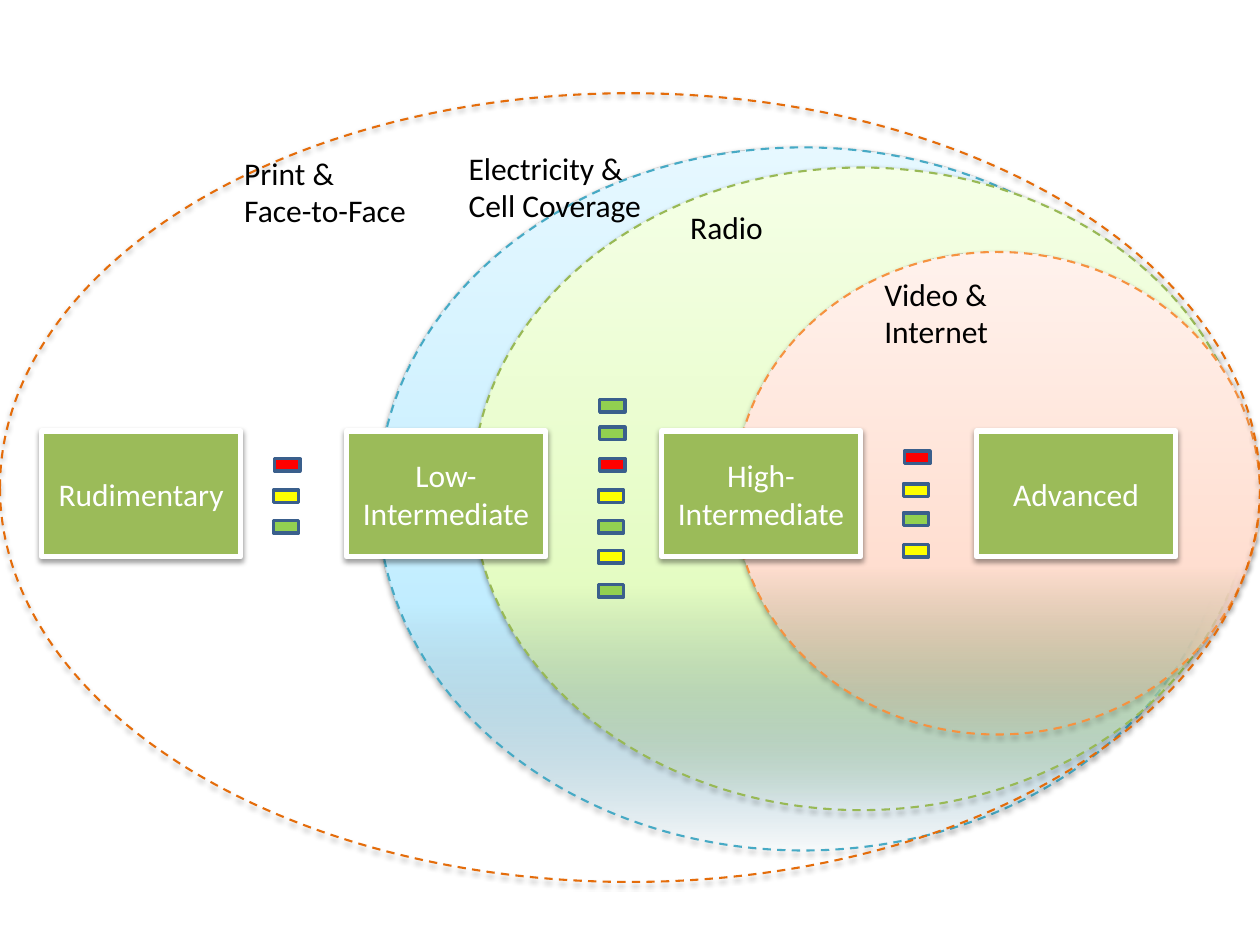
import pptx
import pptx.util
import pptx.dml.color
import pptx.enum.dml
import pptx.enum.shapes
import pptx.enum.text
import pptx.oxml
import pptx.oxml.ns
import lxml.etree

Inches = pptx.util.Inches
Pt = pptx.util.Pt
SHAPE = pptx.enum.shapes.MSO_SHAPE
qn = pptx.oxml.ns.qn


def color(value):
    return pptx.dml.color.RGBColor.from_string(value)


def add_outlined(shapes, kind, box, line, width, shadow=True):
    shape = shapes.add_shape(kind, *[Inches(v) for v in box])
    shape.line.color.rgb = color(line)
    shape.line.width = Pt(width)
    shape.shadow.inherit = False
    if shadow:
        effects = shape._element.spPr.find(qn("a:effectLst"))
        outer = lxml.etree.SubElement(
            effects, qn("a:outerShdw"), blurRad=str(Pt(3.1)), dist=str(Pt(1.6)),
            dir="5400000", rotWithShape="0")
        black = lxml.etree.SubElement(outer, qn("a:srgbClr"), val="000000")
        lxml.etree.SubElement(black, qn("a:alpha"), val="38000")
    return shape


deck = pptx.Presentation()
deck.slide_width = Inches(10)
deck.slide_height = Inches(7.5)
slide = deck.slides.add_slide(deck.slide_layouts[6])

coverage_areas = [
    ((3, 1.17, 6.75, 5.58), "46AAC5", ("A7E6FF", "C1EDFF", "E7F8FF"), 3),
    ((3.75, 1.33, 6.17, 5.1), "98B955", ("DAFDA7", "E4FCC2", "F5FFE7"), 0),
    ((5.83, 2, 4.17, 3.83), "F69240", ("FFD2BD", "FFDED0", "FFF2ED"), 4),
    ((0, 0.74, 10, 6.26), "E46C0A", None, None),
]
for box, line, gradient, opacity in coverage_areas:
    area = add_outlined(slide.shapes, SHAPE.OVAL, box, line, 1.2)
    area.line.dash_style = pptx.enum.dml.MSO_LINE.DASH
    if gradient is None:
        area.fill.background()
        continue
    area.fill.gradient()
    area.fill.gradient_angle = 90
    stops = area._element.spPr.find(qn("a:gradFill")).find(qn("a:gsLst"))
    for stop in list(stops):
        stops.remove(stop)
    for position, shade in zip((0, 35, 100), gradient):
        stop = lxml.etree.SubElement(stops, qn("a:gs"), pos=str(position * 1000))
        tint = lxml.etree.SubElement(stop, qn("a:srgbClr"), val=shade)
        if position == 0:
            lxml.etree.SubElement(tint, qn("a:alpha"), val=str(opacity * 1000))

stages = [(0.33, "Rudimentary"), (2.75, "Low-Intermediate"),
          (5.25, "High-Intermediate"), (7.75, "Advanced")]
for left, name in stages:
    stage = add_outlined(slide.shapes, SHAPE.RECTANGLE, (left, 3.42, 1.58, 1), "FFFFFF", 3)
    stage.fill.solid()
    stage.fill.fore_color.rgb = color("9BBB59")
    stage.text_frame.word_wrap = True
    stage.text_frame.vertical_anchor = pptx.enum.text.MSO_ANCHOR.MIDDLE
    paragraph = stage.text_frame.paragraphs[0]
    paragraph.alignment = pptx.enum.text.PP_ALIGN.CENTER
    run = paragraph.add_run()
    run.text = name
    run.font.size = Pt(18)
    run.font.name = "Calibri"
    run.font.color.rgb = color("FFFFFF")

RED, YELLOW, GREEN = "FF0000", "FFFF00", "92D050"
signal_columns = [
    [(2.18, 3.64, RED), (2.17, 3.89, YELLOW), (2.17, 4.13, GREEN)],
    [(4.76, 3.17, GREEN), (4.76, 3.39, GREEN), (4.76, 3.64, RED), (4.75, 3.89, YELLOW),
     (4.75, 4.13, GREEN), (4.75, 4.37, YELLOW), (4.75, 4.64, GREEN)],
    [(7.18, 3.58, RED), (7.17, 3.84, YELLOW), (7.17, 4.07, GREEN), (7.17, 4.32, YELLOW)],
]
for signals in signal_columns:
    column = slide.shapes.add_group_shape()
    for left, top, fill in signals:
        signal = add_outlined(column.shapes, SHAPE.RECTANGLE, (left, top, 0.2, 0.1),
                              "3A5F8C", 2, shadow=False)
        signal.fill.solid()
        signal.fill.fore_color.rgb = color(fill)

media_labels = [
    ((3.62, 1.13, 1.59, 0.71), ["Electricity &", "Cell Coverage"], False),
    ((5.38, 1.6, 0.84, 0.4), ["Radio"], False),
    ((1.84, 1.17, 1.5, 0.71), ["Print &", "Face-to-Face"], False),
    ((6.92, 2.13, 1.25, 0.71), ["Video &", "Internet"], True),
]
for box, lines, wraps in media_labels:
    label = slide.shapes.add_textbox(*[Inches(v) for v in box]).text_frame
    label.word_wrap = wraps
    label.auto_size = pptx.enum.text.MSO_AUTO_SIZE.SHAPE_TO_FIT_TEXT
    for index, line in enumerate(lines):
        paragraph = label.add_paragraph() if index else label.paragraphs[0]
        run = paragraph.add_run()
        run.text = line
        run.font.size = Pt(18)
        run.font.name = "Calibri"
        run.font.color.rgb = color("000000")

deck.save("out.pptx")
